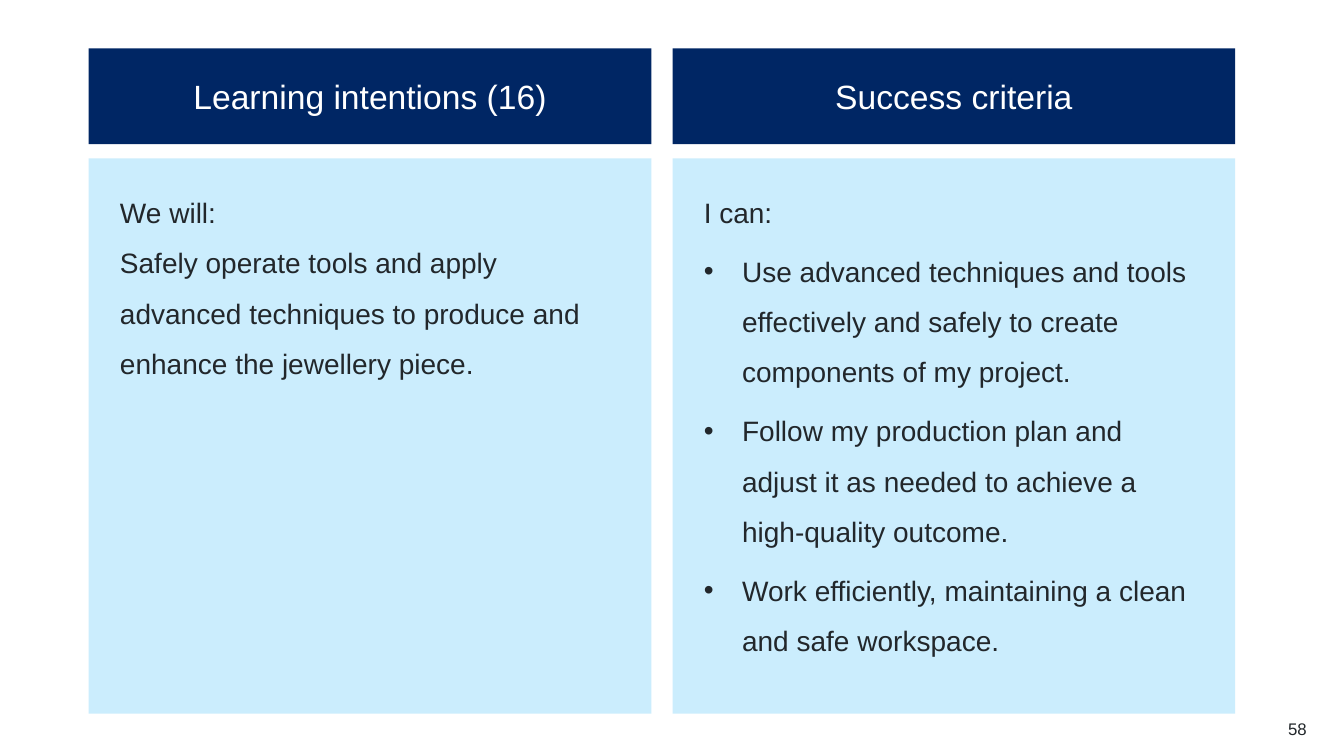
from pptx import Presentation
from pptx.dml.color import RGBColor
from pptx.enum.shapes import MSO_SHAPE
from pptx.enum.text import MSO_ANCHOR, MSO_AUTO_SIZE, PP_ALIGN
from pptx.util import Pt
from lxml.etree import SubElement
from pptx.oxml.ns import qn

PX = 9144
NAVY = RGBColor(0x00, 0x26, 0x64)
SKY = RGBColor(0xCB, 0xED, 0xFD)
WHITE = RGBColor(0xFF, 0xFF, 0xFF)
INK = RGBColor(0x22, 0x27, 0x2B)


def place(shape, left, top, width, height, fill=None):
    shape.left, shape.top = left * PX, top * PX
    shape.width, shape.height = width * PX, height * PX
    if fill is not None:
        shape.fill.solid()
        shape.fill.fore_color.rgb = fill
        shape.line.fill.background()


def write(shape, lines, size, color, align=PP_ALIGN.LEFT, anchor=MSO_ANCHOR.TOP,
          inset=(10, 5, 10, 5), space=1.0, after=0, hang=0):
    frame = shape.text_frame
    frame.word_wrap = True
    frame.auto_size = MSO_AUTO_SIZE.NONE
    frame.vertical_anchor = anchor
    frame.margin_left, frame.margin_top, frame.margin_right, frame.margin_bottom = [
        side * PX for side in inset]
    frame.text = "\n".join(lines)
    for row, para in enumerate(frame.paragraphs):
        para.alignment = align
        para.line_spacing = space
        para.space_before = Pt(0)
        para.space_after = Pt(after)
        font = para.runs[0].font
        font.name, font.size, font.bold = "Arial", Pt(size), False
        font.color.rgb = color
        props = para._p.get_or_add_pPr()
        indent = hang * PX if row else 0
        props.set("marL", str(indent))
        props.set("indent", str(-indent))
        if indent:
            SubElement(props, qn("a:buFont"), typeface="Arial")
            SubElement(props, qn("a:buChar"), char="•")
        else:
            SubElement(props, qn("a:buNone"))


deck = Presentation()
deck.slide_width, deck.slide_height = 1333 * PX, 750 * PX
slide = deck.slides.add_slide(deck.slide_layouts[3])
title, goals, marks = slide.placeholders
head = slide.shapes.add_shape(MSO_SHAPE.RECTANGLE, 0, 0, PX, PX)
head.shadow.inherit = False

columns = [
    (title, "Learning intentions (16)", goals, 0, 0, [
        "We will:",
        "Safely operate tools and apply advanced techniques to produce and "
        "enhance the jewellery piece.",
    ]),
    (head, "Success criteria", marks, 6, 38, [
        "I can:",
        "Use advanced techniques and tools effectively and safely to create "
        "components of my project.",
        "Follow my production plan and adjust it as needed to achieve a "
        "high-quality outcome.",
        "Work efficiently, maintaining a clean and safe workspace.",
    ]),
]
for col, (top, name, body, after, hang, lines) in enumerate(columns):
    left = 88 + col * 579
    place(top, left, 48, 558, 95, NAVY)
    write(top, [name], 24, WHITE, align=PP_ALIGN.CENTER, anchor=MSO_ANCHOR.MIDDLE)
    place(body, left, 157, 558, 551, SKY)
    write(body, lines, 20, INK, inset=(31, 20, 35, 5), space=1.5, after=after, hang=hang)

page = slide.shapes.add_textbox(0, 0, PX, PX)
place(page, 1217, 713, 79, 20)
write(page, ["58"], 12, INK, align=PP_ALIGN.RIGHT, inset=(0, 0, 0, 0))

deck.save("out.pptx")
